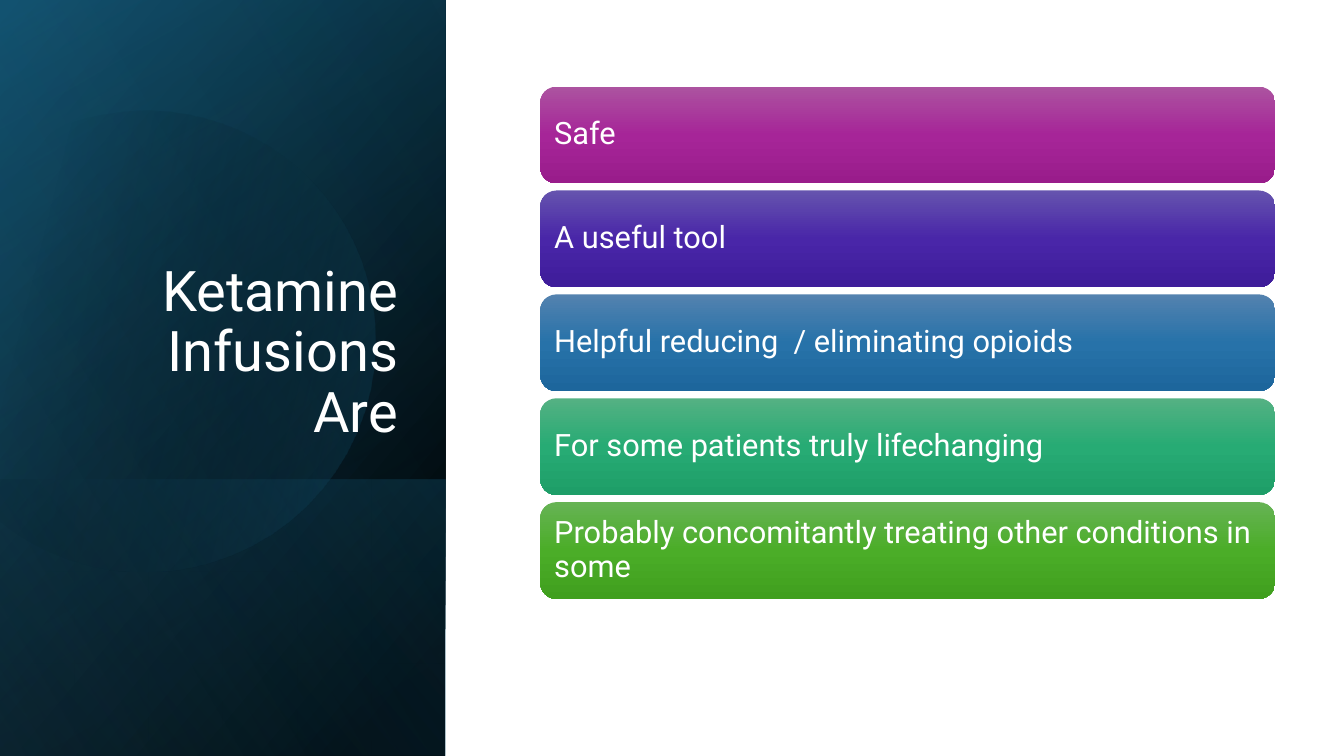
from math import cos, radians, sin

from lxml.etree import SubElement
from pptx import Presentation
from pptx.dml.color import RGBColor
from pptx.enum.shapes import MSO_SHAPE
from pptx.enum.text import MSO_ANCHOR, MSO_AUTO_SIZE, PP_ALIGN
from pptx.oxml.ns import qn
from pptx.util import Pt

FONT = "Roboto"
PANEL_WIDTH = 318.24
PAGE_HEIGHT = 540
DISC_CENTER = (114.12, 240.84)
DISC_ROTATION = 343.9
DISC_START = (107.3, 79.2)
DISC_CURVES = [
    [(177.1, 80.6), (241.2, 127.4), (261.4, 198)],
    [(286.6, 285.8), (236.2, 376.6), (149, 401.8)],
    [(94.3, 417.6), (38.2, 403.9), (-2.2, 370.1)],
    [(-10.8, 362.2)],
    [(-10.8, 126)],
    [(0, 115.9)],
    [(16.6, 102.2), (36, 92.2), (57.6, 85.7)],
    [(74.2, 81.4), (90.7, 79.2), (107.3, 79.2)],
]
BENEFITS = [
    ("Safe", "AC53A0", "A62598", "991C8B"),
    ("A useful tool", "6553AE", "4926A8", "3E1C9A"),
    ("Helpful reducing  / eliminating opioids", "5382AF", "2772A9", "1D669C"),
    ("For some patients truly lifechanging", "54B183", "27AB74", "1E9E68"),
    ("Probably concomitantly treating other conditions in some", "66B354", "4BAD28", "409F1E"),
]


def color(code):
    return RGBColor.from_string(code)


def paint_gradient(shape, stops, angle):
    shape.shadow.inherit = False
    shape.line.fill.background()
    shape.fill.gradient()
    gradient = shape.fill._fill._gradFill
    for child in list(gradient):
        gradient.remove(child)
    gradient.set("rotWithShape", "1")
    stop_list = SubElement(gradient, qn("a:gsLst"))
    for position, code, opacity in stops:
        stop = SubElement(stop_list, qn("a:gs"), pos=str(position * 1000))
        tint = SubElement(stop, qn("a:srgbClr"), val=str(color(code)))
        if opacity < 100:
            SubElement(tint, qn("a:alpha"), val=str(opacity * 1000))
    SubElement(gradient, qn("a:lin"), ang=str(angle * 60000), scaled="0")


def write_text(frame, text, size, align=PP_ALIGN.LEFT, anchor=MSO_ANCHOR.MIDDLE):
    frame.word_wrap = True
    frame.auto_size = MSO_AUTO_SIZE.NONE
    frame.vertical_anchor = anchor
    para = frame.paragraphs[0]
    para.alignment = align
    para.line_spacing = 0.9
    span = para.add_run()
    span.text = text
    span.font.name = FONT
    span.font.size = Pt(size)
    span.font.color.rgb = color("FFFFFF")


def add_panel(page, top, stops, angle):
    height = PAGE_HEIGHT - top
    left = (PANEL_WIDTH - height) / 2
    box_top = top + (height - PANEL_WIDTH) / 2
    panel = page.shapes.add_shape(
        MSO_SHAPE.RECTANGLE, Pt(left), Pt(box_top), Pt(height), Pt(PANEL_WIDTH))
    panel.rotation = 90
    panel._element.spPr.find(qn("a:xfrm")).set("flipH", "1")
    paint_gradient(panel, stops, angle)


def curve_points(start, controls, steps=16):
    if len(controls) == 1:
        return controls
    anchors = [start, *controls]
    points = []
    for step in range(1, steps + 1):
        t = step / steps
        weights = ((1 - t) ** 3, 3 * t * (1 - t) ** 2, 3 * t * t * (1 - t), t ** 3)
        points.append(tuple(
            sum(weight * anchor[axis] for weight, anchor in zip(weights, anchors))
            for axis in (0, 1)))
    return points


def turn(point, center, degrees):
    angle = radians(degrees)
    across, down = point[0] - center[0], point[1] - center[1]
    return (Pt(center[0] + across * cos(angle) - down * sin(angle)),
            Pt(center[1] + across * sin(angle) + down * cos(angle)))


def add_disc(page):
    outline = [DISC_START]
    for controls in DISC_CURVES:
        outline += curve_points(outline[-1], controls)
    points = [turn(point, DISC_CENTER, -DISC_ROTATION) for point in outline]
    builder = page.shapes.build_freeform(*points[0])
    builder.add_line_segments(points[1:], close=True)
    disc = builder.convert_to_shape()
    disc.rotation = DISC_ROTATION
    paint_gradient(disc, [(29, "000000", 0), (100, "156082", 43)], 30)


def add_title(page, text):
    title = page.shapes.title
    title.left, title.top, title.width, title.height = Pt(46), Pt(132.5), Pt(245.5), Pt(188.6)
    write_text(title.text_frame, text, 40, align=PP_ALIGN.RIGHT, anchor=MSO_ANCHOR.BOTTOM)
    page.shapes._spTree.append(title._element)


def add_benefit(page, index, text, light, middle, dark):
    bar = page.shapes.add_shape(
        MSO_SHAPE.ROUNDED_RECTANGLE, Pt(385.9), Pt(61.9 + index * 74.2), Pt(524.9), Pt(69.1))
    paint_gradient(bar, [(0, light, 100), (50, middle, 100), (100, dark, 100)], 90)
    frame = bar.text_frame
    frame.margin_left = frame.margin_right = Pt(6.6)
    frame.margin_top = frame.margin_bottom = Pt(6.6)
    write_text(frame, text, 22)


def main():
    deck = Presentation()
    deck.slide_width, deck.slide_height = Pt(960), Pt(PAGE_HEIGHT)
    page = deck.slides.add_slide(deck.slide_layouts[5])
    add_panel(page, 0, [(8, "000000", 100), (100, "104862", 100)], 50)
    add_panel(page, 0, [(0, "000000", 0), (99, "156082", 46)], 30)
    add_panel(page, 342.7, [(2, "156082", 29), (100, "000000", 30)], 130)
    add_disc(page)
    add_panel(page, 0, [(0, "000000", 0), (99, "46B1E1", 11)], 120)
    add_title(page, "Ketamine Infusions Are")
    for index, benefit in enumerate(BENEFITS):
        add_benefit(page, index, *benefit)
    deck.save("out.pptx")


if __name__ == "__main__":
    main()
